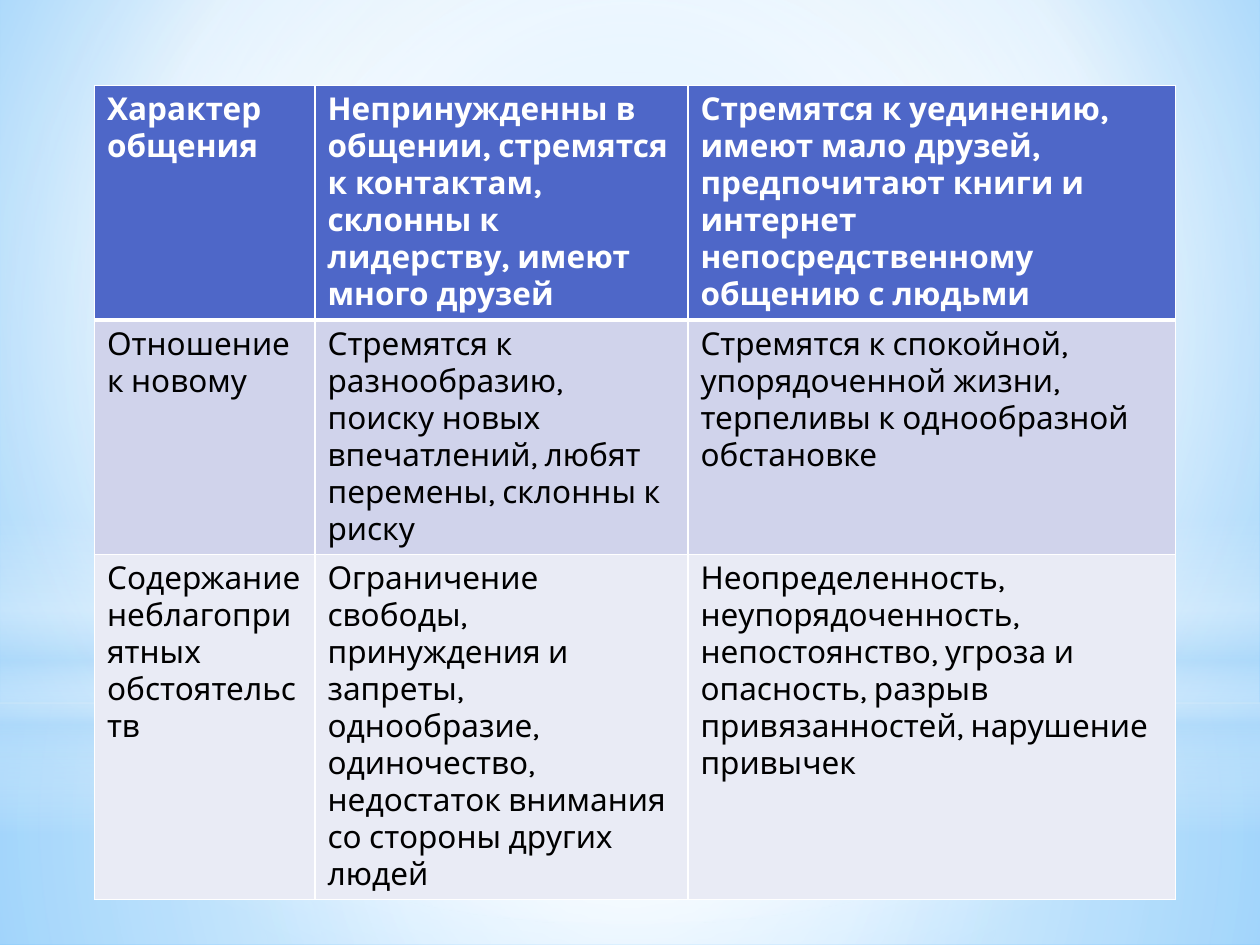
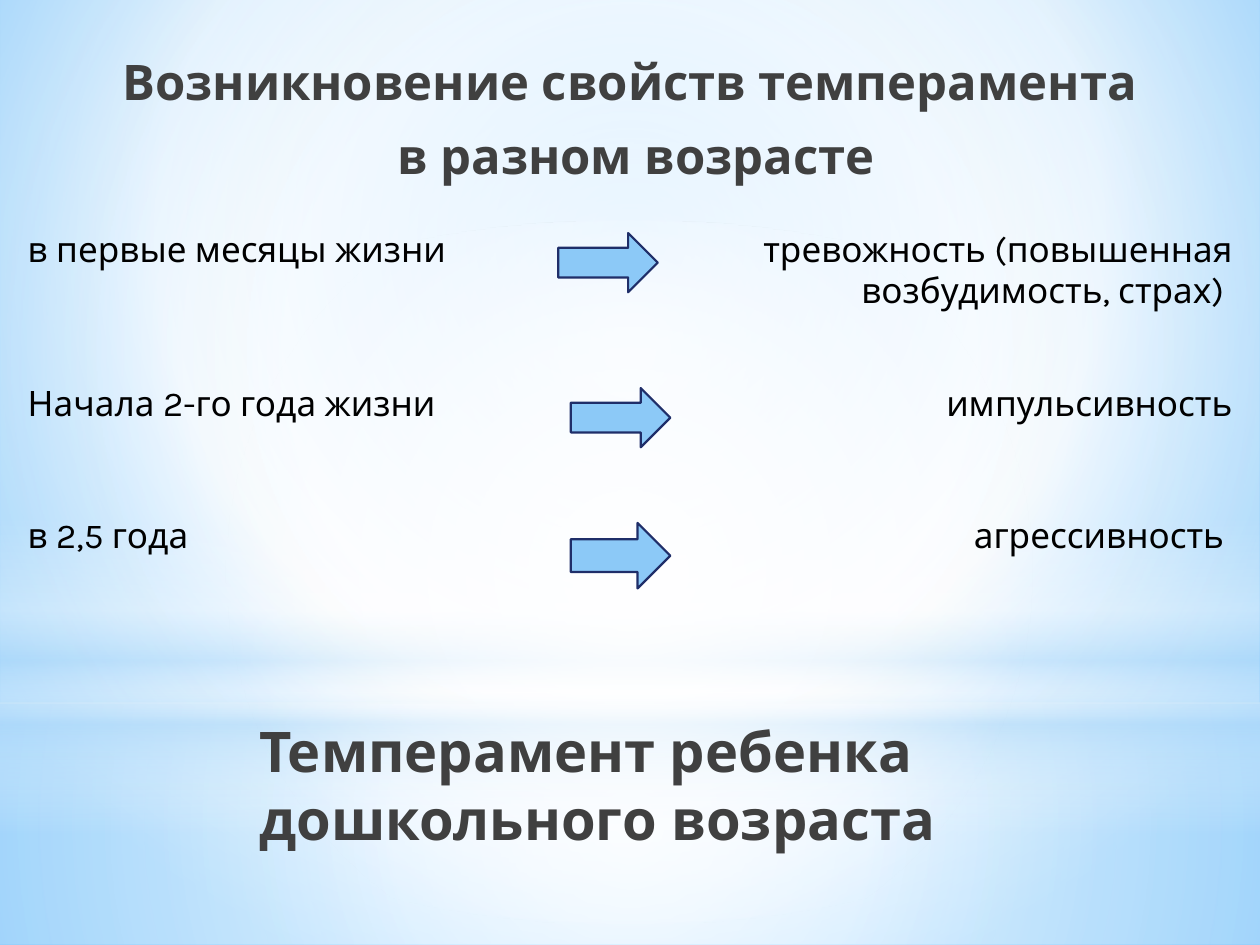
"""Build two slides about temperament: a comparison table and age-related traits."""
import pptx
import pptx.dml.color
import pptx.enum.shapes
import pptx.enum.text
import pptx.oxml
import pptx.oxml.ns
import pptx.util

Inches = pptx.util.Inches
SHAPE = pptx.enum.shapes.MSO_SHAPE
ALIGN = pptx.enum.text.PP_ALIGN
FONT = "Karla"
COLORS = {
    "white": "FFFFFF", "black": "000000", "heading": "404040",
    "sky": "9ED5FF", "azure": "5BB9FF", "haze": "B4DCFA",
    "header": "4E67C8", "band": "D0D3EB", "pale": "E9EBF5",
    "arrow": "8CC9F7", "outline": "1F2E69",
}
CENTER = (50, 50, 50, 50)
BACKGROUND = [(0, "sky", 100), (60, "white", 100), (100, "azure", 100)]
GLOWS = [
    (SHAPE.RECTANGLE, 5.58, 1.92,
     [(0, "white", 91), (37, "white", 76), (100, "haze", 79)], CENTER),
    (SHAPE.RECTANGLE, 0, 5.58,
     [(0, "white", 89), (48, "white", 62), (100, "haze", 79)], CENTER),
    (SHAPE.RECTANGLE, 4.12, 2.5,
     [(0, "white", 0), (29, "white", 30), (45, "haze", 40),
      (55, "white", 26), (65, "haze", 60), (100, "white", 0)], None),
    (SHAPE.OVAL, 1.75, 5.58, [(0, "white", 100), (56, "white", 0)], CENTER),
]
COMPARISON = [
    ["Характер общения",
     "Непринужденны в общении, стремятся к контактам, склонны к лидерству, "
     "имеют много друзей",
     "Стремятся к уединению, имеют мало друзей, предпочитают книги и интернет "
     "непосредственному общению с людьми"],
    ["Отношение к новому",
     "Стремятся к разнообразию, поиску новых впечатлений, любят перемены, "
     "склонны к риску",
     "Стремятся к спокойной, упорядоченной жизни, терпеливы к однообразной "
     "обстановке"],
    ["Содержание неблагоприятных обстоятельств",
     "Ограничение свободы, принуждения и запреты, однообразие, одиночество, "
     "недостаток внимания со стороны других людей",
     "Неопределенность, неупорядоченность, непостоянство, угроза и опасность, "
     "разрыв привязанностей, нарушение привычек"],
]
AGES = [
    ["в первые месяцы жизни", "тревожность (повышенная возбудимость, страх) "],
    ["Начала 2-го года жизни", "импульсивность"],
    ["в 2,5 года", "агрессивность "],
]
ARROWS = [(4.43, 1.85, 0.47), (4.53, 3.08, 0.47), (4.53, 4.15, 0.52)]


def rgb(name):
    """Return the named colour."""
    return pptx.dml.color.RGBColor.from_string(COLORS[name])


def draw_xml(tag, attrs, body):
    """Parse one DrawingML element."""
    ns = pptx.oxml.ns.nsdecls("a")
    return pptx.oxml.parse_xml(f"<a:{tag} {ns} {attrs}>{body}</a:{tag}>")


def set_gradient(owner, fill, stops, focus):
    """Fill with a circular gradient around focus, or a vertical one without it."""
    gs = "".join(
        f'<a:gs pos="{pos * 1000}"><a:srgbClr val="{COLORS[name]}">'
        f'<a:alpha val="{alpha * 1000}"/></a:srgbClr></a:gs>'
        for pos, name, alpha in stops)
    if focus:
        sides = " ".join(f'{k}="{v * 1000}"' for k, v in zip("ltrb", focus))
        direction = f'<a:path path="circle"><a:fillToRect {sides}/></a:path>'
    else:
        direction = '<a:lin ang="5400000" scaled="0"/>'
    fill.solid()
    solid = owner.element.find(".//" + pptx.oxml.ns.qn("a:solidFill"))
    solid.getparent().replace(solid, draw_xml(
        "gradFill", 'rotWithShape="1"', f"<a:gsLst>{gs}</a:gsLst>{direction}"))


def add_glow_slide(prs):
    """Add a blank slide with the shared sky background."""
    s = prs.slides.add_slide(prs.slide_layouts[6])
    set_gradient(s, s.background.fill, BACKGROUND, (20, 10, 20, 60))
    for kind, top, height, stops, focus in GLOWS:
        sp = s.shapes.add_shape(kind, 0, Inches(top), prs.slide_width, Inches(height))
        sp.shadow.inherit = False
        sp.line.fill.background()
        set_gradient(sp, sp.fill, stops, focus)
    return s


def add_run(p, text, size, color, bold=False):
    """Append a formatted run to a paragraph."""
    r = p.add_run()
    r.text = text
    r.font.name = FONT
    r.font.size = pptx.util.Pt(size)
    r.font.bold = bold
    r.font.color.rgb = rgb(color)


def add_heading(s, box, lines, size, align=ALIGN.LEFT, before=0, after=0, inset=0.1):
    """Add a bold heading with one paragraph per line."""
    tf = s.shapes.add_textbox(*map(Inches, box)).text_frame
    tf.word_wrap = True
    tf.margin_left = Inches(inset)
    for i, text in enumerate(lines):
        p = tf.add_paragraph() if i else tf.paragraphs[0]
        p.alignment = align
        p.space_before = pptx.util.Pt(before)
        p.space_after = pptx.util.Pt(after)
        add_run(p, text, size, "heading", bold=True)


def set_borders(cell, widths):
    """Set white left, right, top and bottom borders; zero hides one."""
    for i, (side, width) in enumerate(zip("LRTB", widths)):
        paint = (f'<a:solidFill><a:srgbClr val="{COLORS["white"]}"/></a:solidFill>'
                 if width else "<a:noFill/>")
        cell._tc.get_or_add_tcPr().insert(
            i, draw_xml(f"ln{side}", f'w="{pptx.util.Pt(width)}"', paint))


def add_grid(s, left, top, cols, rows):
    """Add a plain table with the given column widths and row heights."""
    tbl = s.shapes.add_table(len(rows), len(cols), Inches(left), Inches(top),
                             Inches(sum(cols)), Inches(sum(rows))).table
    tbl.first_row = tbl.horz_banding = False
    for col, width in zip(tbl.columns, cols):
        col.width = Inches(width)
    for row, height in zip(tbl.rows, rows):
        row.height = Inches(height)
    return tbl


def add_comparison(s):
    """Add the filled comparison table."""
    tbl = add_grid(s, 0.75, 0.68, [1.75, 2.96, 3.87], [1.82, 1.82, 2.5])
    for i, (texts, fill) in enumerate(zip(COMPARISON, ("header", "band", "pale"))):
        for j, text in enumerate(texts):
            cell = tbl.cell(i, j)
            cell.fill.solid()
            cell.fill.fore_color.rgb = rgb(fill)
            set_borders(cell, (1, 1, 3 if i == 1 else 1, 3 if i == 0 else 1))
            add_run(cell.text_frame.paragraphs[0], text, 18,
                    "black" if i else "white", bold=i == 0)


def add_ages(s):
    """Add the unfilled table of ages and traits."""
    tbl = add_grid(s, 0.12, 1.78, [4.33, 5.43], [1.22, 1.05, 1.05])
    for i, texts in enumerate(AGES):
        for j, text in enumerate(texts):
            cell = tbl.cell(i, j)
            cell.fill.background()
            set_borders(cell, (0, 0, 0, 0))
            p = cell.text_frame.paragraphs[0]
            p.alignment = ALIGN.RIGHT if j else ALIGN.LEFT
            add_run(p, text, 20, "black")


def add_arrow(s, left, top, height):
    """Add a block arrow from an age to its trait."""
    sp = s.shapes.add_shape(SHAPE.RIGHT_ARROW, Inches(left), Inches(top),
                            Inches(0.79), Inches(height))
    sp.shadow.inherit = False
    sp.fill.solid()
    sp.fill.fore_color.rgb = rgb("arrow")
    sp.line.color.rgb = rgb("outline")
    sp.line.width = pptx.util.Pt(1.25)


def main():
    """Build and save both slides."""
    prs = pptx.Presentation()
    prs.slide_width, prs.slide_height = Inches(10), Inches(7.5)

    add_comparison(add_glow_slide(prs))

    s = add_glow_slide(prs)
    add_heading(s, (1.96, 5.64, 7.12, 1.1),
                ["Темперамент ребенка дошкольного возраста"], 32)
    add_heading(s, (0.12, 0.36, 9.8, 0.79),
                ["Возникновение свойств темперамента ", "в разном возрасте"],
                28, ALIGN.CENTER, before=5.6, after=3, inset=0.15)
    add_ages(s)
    for arrow in ARROWS:
        add_arrow(s, *arrow)

    prs.save("out.pptx")


if __name__ == "__main__":
    main()
